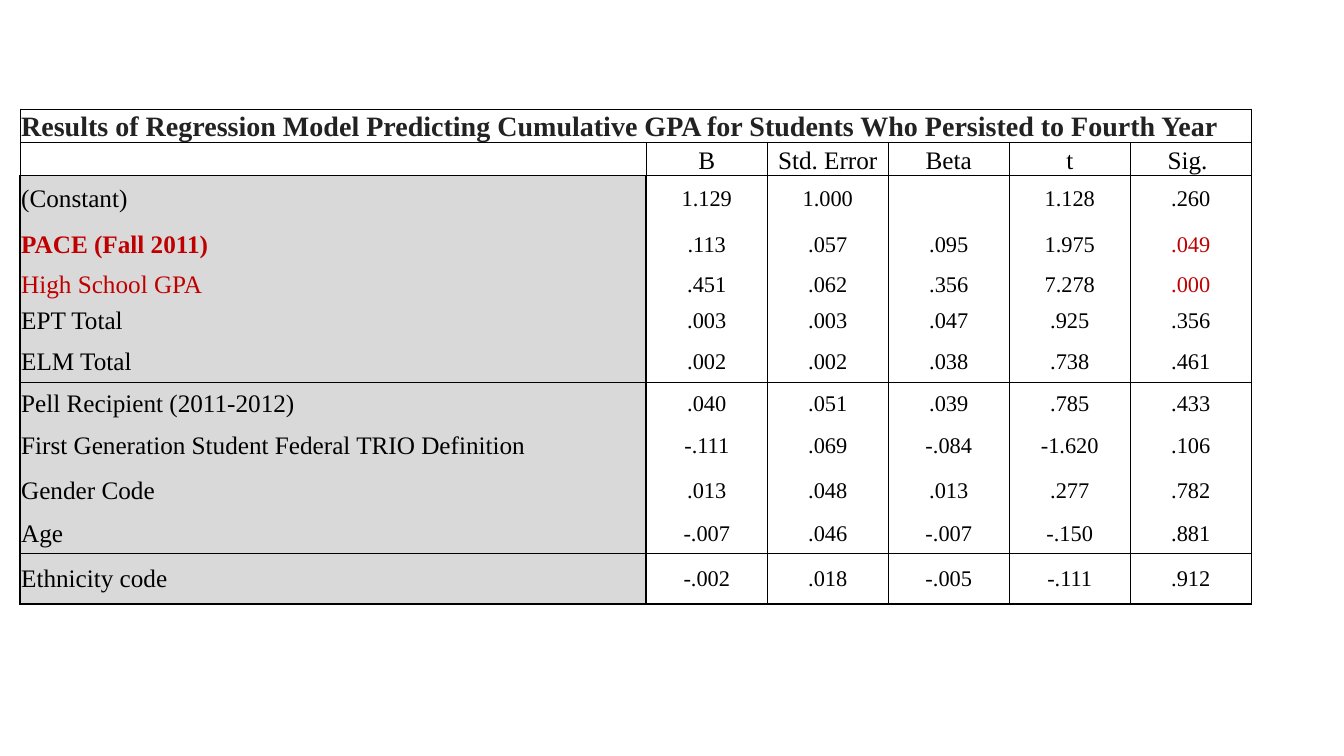
"""Builds a slide with the regression results for cumulative GPA."""
import dataclasses

import lxml.etree
import pptx
import pptx.dml.color
import pptx.enum.text
import pptx.oxml.ns
import pptx.util

Inches = pptx.util.Inches
Pt = pptx.util.Pt
Align = pptx.enum.text.PP_ALIGN
Anchor = pptx.enum.text.MSO_ANCHOR


@dataclasses.dataclass(frozen=True)
class Theme:
    font: str = "Times New Roman"
    ink: str = "000000"
    heading: str = "222222"
    accent: str = "C00000"
    label_fill: str = "D9D9D9"
    heading_size: int = 20
    label_size: int = 18
    value_size: int = 16
    thin: float = 0.5
    thick: float = 1.5


HEADING = "Results of Regression Model Predicting Cumulative GPA for Students Who Persisted to Fourth Year"
MEASURES = ["", "B", "Std. Error", "Beta", "t", "Sig. "]
PREDICTOR_BLOCKS = [
    [
        ["(Constant)", "1.129", "1.000", "", "1.128", ".260"],
        ["PACE (Fall 2011)", ".113", ".057", ".095", "1.975", ".049"],
        ["High School GPA", ".451", ".062", ".356", "7.278", ".000"],
        ["EPT Total", ".003", ".003", ".047", ".925", ".356"],
        ["ELM Total", ".002", ".002", ".038", ".738", ".461"],
    ],
    [
        ["Pell Recipient (2011-2012)", ".040", ".051", ".039", ".785", ".433"],
        ["First Generation Student Federal TRIO Definition", "-.111", ".069", "-.084", "-1.620", ".106"],
        ["Gender Code", ".013", ".048", ".013", ".277", ".782"],
        ["Age", "-.007", ".046", "-.007", "-.150", ".881"],
    ],
    [["Ethnicity code", "-.002", ".018", "-.005", "-.111", ".912"]],
]
COLUMN_WIDTHS = [6.21] + [1.2] * 5
ROW_HEIGHTS = [0.33, 0.33, 0.45, 0.48, 0.3, 0.42, 0.4, 0.42, 0.43, 0.45, 0.4, 0.5]
SIGNIFICANCE_LEVEL = 0.05


class SlideBuilder:
    """Holds the theme and the current slide."""

    def __init__(self, slide, theme):
        self.slide = slide
        self.theme = theme

    def grid(self, left, top, widths, heights):
        """Adds an empty table with the given column widths and row heights."""
        frame = self.slide.shapes.add_table(
            len(heights), len(widths), Inches(left), Inches(top),
            Inches(sum(widths)), Inches(sum(heights)))
        table = frame.table
        table.first_row = table.horz_banding = False
        for column, width in zip(table.columns, widths):
            column.width = Inches(width)
        for row, height in zip(table.rows, heights):
            row.height = Inches(height)
        return table

    def cell(self, cell, words, borders, size, color=None, bold=False,
             align=Align.CENTER, anchor=Anchor.MIDDLE, fill=None):
        """Writes and formats one table cell."""
        layout = {"margin_left": Inches(0.01), "margin_right": Inches(0.01),
                  "margin_top": Inches(0.01), "margin_bottom": 0,
                  "vertical_anchor": anchor}
        for name, value in layout.items():
            setattr(cell, name, value)
        if fill:
            cell.fill.solid()
            cell.fill.fore_color.rgb = pptx.dml.color.RGBColor.from_string(fill)
        else:
            cell.fill.background()
        self.borders(cell, borders)
        paragraph = cell.text_frame.paragraphs[0]
        paragraph.alignment = align
        if words:
            run = paragraph.add_run()
            run.text = words
            style = {"name": self.theme.font, "size": Pt(size), "bold": bold}
            for name, value in style.items():
                setattr(run.font, name, value)
            run.font.color.rgb = pptx.dml.color.RGBColor.from_string(color or self.theme.ink)

    def borders(self, cell, widths):
        """Draws the left, right, top and bottom borders; zero means no line."""
        qn = pptx.oxml.ns.qn
        properties = cell._tc.get_or_add_tcPr()
        for position, (side, width) in enumerate(zip("LRTB", widths)):
            line = lxml.etree.Element(qn(f"a:ln{side}"), w=str(Pt(width)))
            properties.insert(position, line)
            if width:
                paint = lxml.etree.SubElement(line, qn("a:solidFill"))
                lxml.etree.SubElement(paint, qn("a:srgbClr"), val=self.theme.ink)
            else:
                lxml.etree.SubElement(line, qn("a:noFill"))

    def header(self, table):
        """Fills the heading row and the row of measure names."""
        theme = self.theme
        boxed = [theme.thin] * 4
        for column, measure in enumerate(MEASURES):
            self.cell(table.cell(0, column), "" if column else HEADING, boxed,
                      theme.heading_size, theme.heading, True, Align.LEFT, Anchor.BOTTOM)
            self.cell(table.cell(1, column), measure, boxed,
                      theme.label_size, anchor=Anchor.BOTTOM)
        table.cell(0, 0).merge(table.cell(0, len(MEASURES) - 1))

    def predictor(self, table, row, record, top, bottom):
        """Fills one predictor row, marking significant results."""
        theme = self.theme
        label, *values = record
        significant = float(values[-1]) < SIGNIFICANCE_LEVEL
        accent = theme.accent if significant else theme.ink
        self.cell(table.cell(row, 0), label, [theme.thick, theme.thick, top, bottom],
                  theme.label_size, accent, label.startswith("PACE"),
                  Align.LEFT, fill=theme.label_fill)
        for column, value in enumerate(values, 1):
            left = theme.thick if column == 1 else theme.thin
            self.cell(table.cell(row, column), value, [left, theme.thin, top, bottom],
                      theme.value_size, accent if column == len(values) else theme.ink)


def main():
    presentation = pptx.Presentation()
    presentation.slide_width = Inches(13.33)
    presentation.slide_height = Inches(7.5)
    theme = Theme()
    builder = SlideBuilder(presentation.slides.add_slide(presentation.slide_layouts[6]), theme)
    results = builder.grid(0.2, 1.08, COLUMN_WIDTHS, ROW_HEIGHTS)
    builder.header(results)
    row = 2
    for block in PREDICTOR_BLOCKS:
        block_end = theme.thick if block is PREDICTOR_BLOCKS[-1] else theme.thin
        for record in block:
            top = theme.thin if record is block[0] else 0
            bottom = block_end if record is block[-1] else 0
            builder.predictor(results, row, record, top, bottom)
            row += 1
    presentation.save("out.pptx")


if __name__ == "__main__":
    main()
